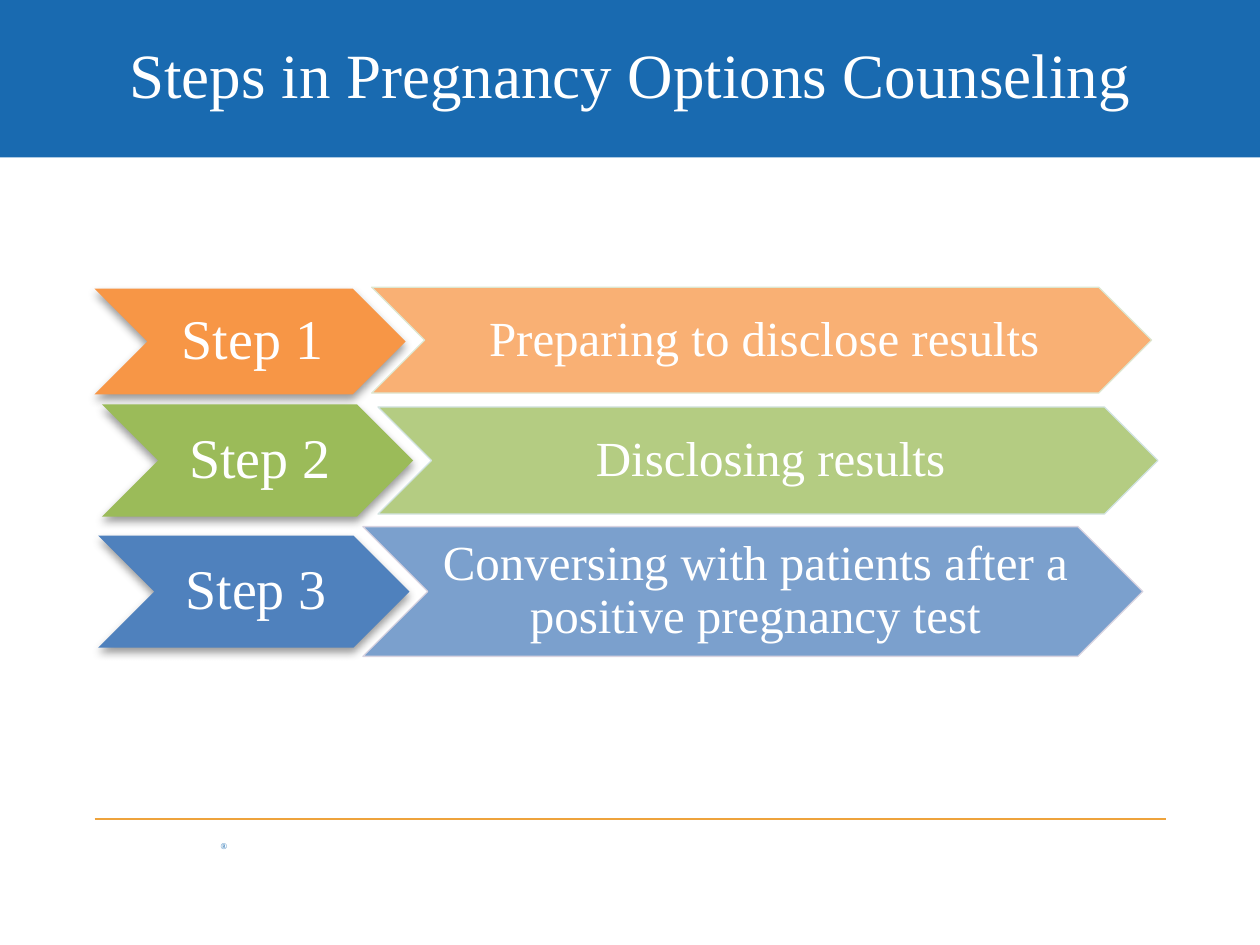
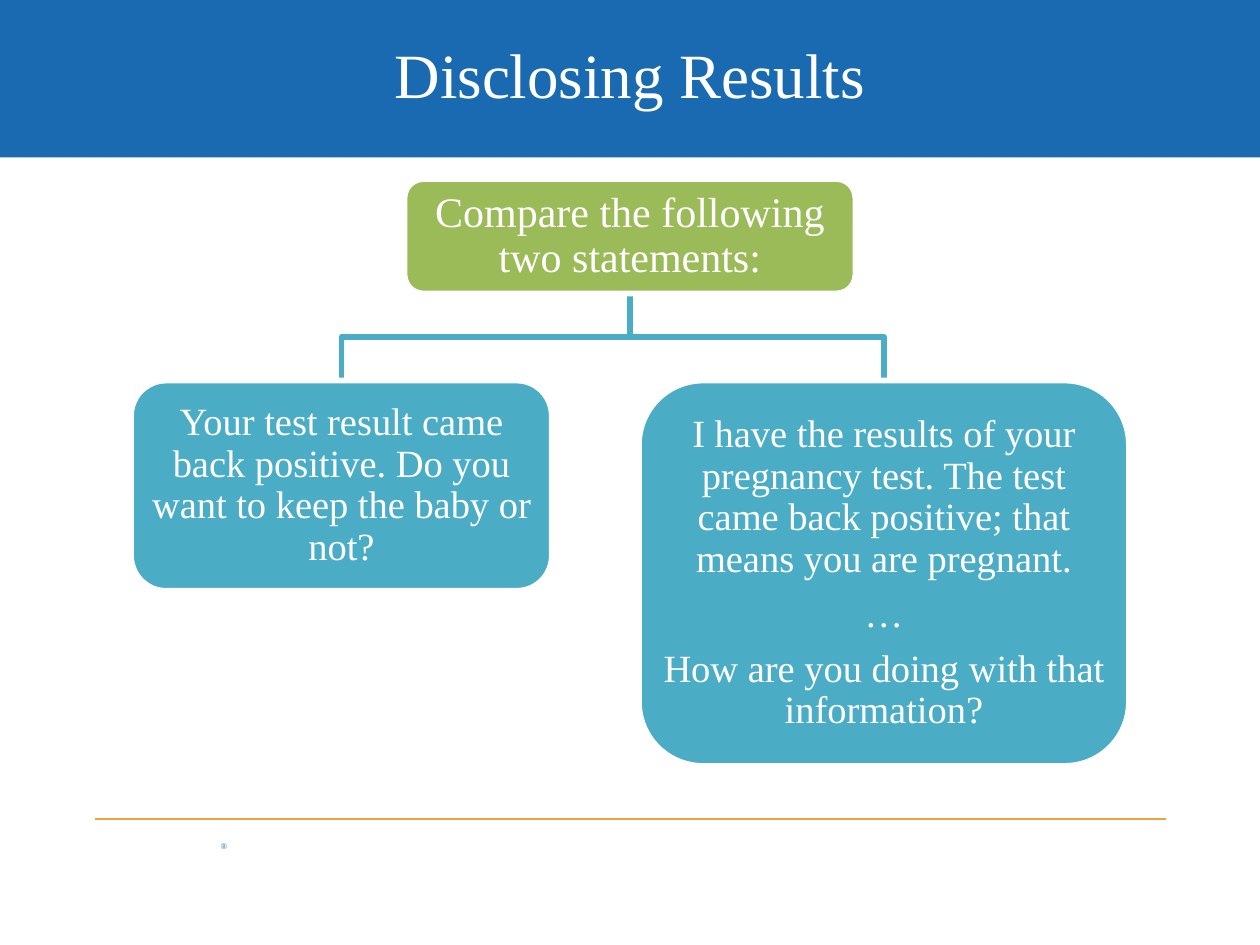
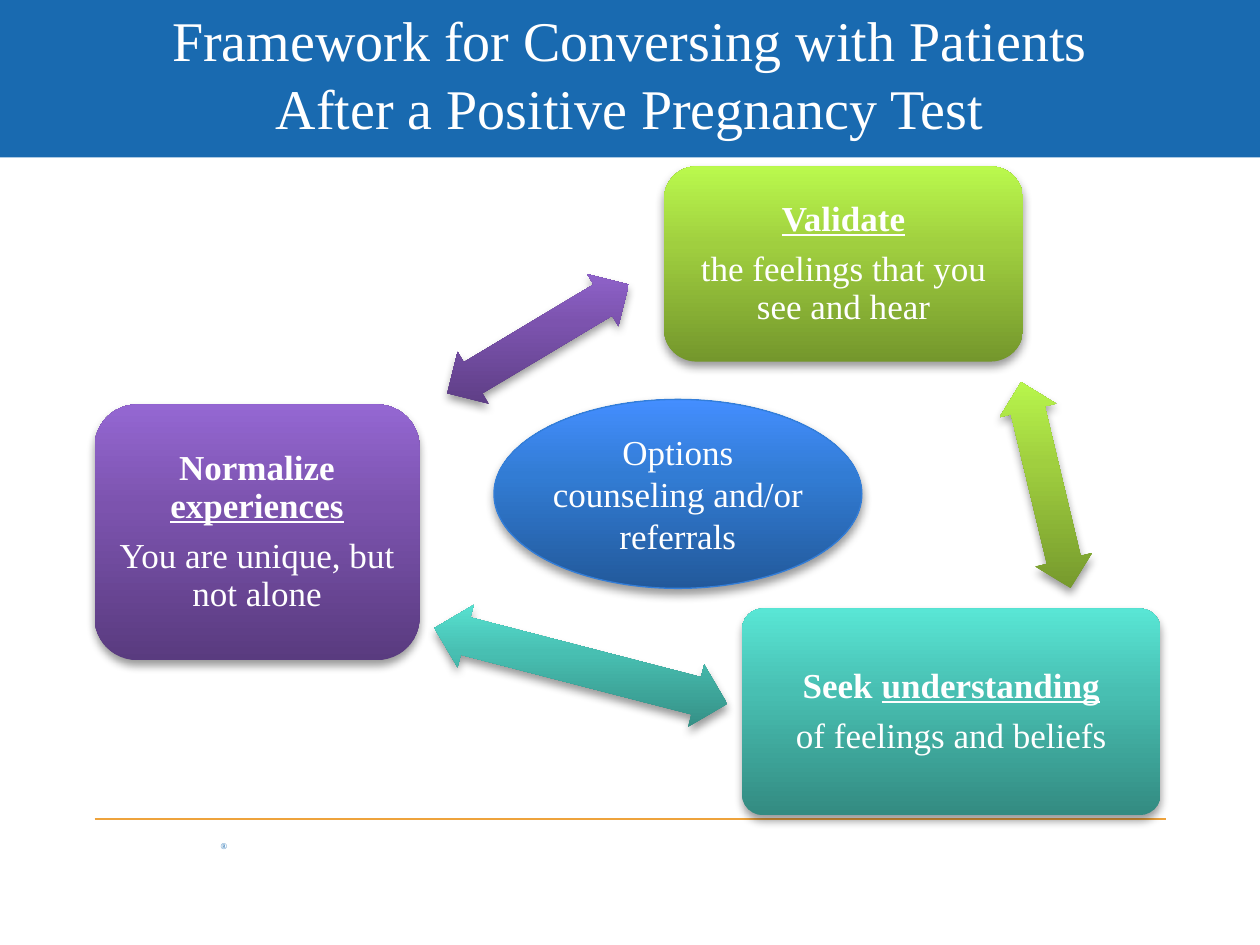
from typing import NamedTuple

from lxml.etree import SubElement
from pptx import Presentation
from pptx.dml.color import RGBColor
from pptx.enum.shapes import MSO_CONNECTOR, MSO_SHAPE as SHAPE
from pptx.enum.text import MSO_ANCHOR as ANCHOR, PP_ALIGN as ALIGN
from pptx.oxml.ns import qn
from pptx.util import Inches, Pt

FONT = "Times New Roman"
WHITE = RGBColor(0xFF, 0xFF, 0xFF)
BLACK = RGBColor(0x00, 0x00, 0x00)
BAND_BLUE = RGBColor(0x19, 0x6A, 0xB0)
RULE_GOLD = RGBColor(0xEE, 0xA3, 0x3C)
ORANGE = RGBColor(0xF7, 0x96, 0x46)
GREEN = RGBColor(0x9B, 0xBB, 0x59)
BLUE = RGBColor(0x4F, 0x81, 0xBD)
AQUA = RGBColor(0x4B, 0xAC, 0xC6)
ORANGE_EDGE = RGBColor(0xDE, 0xE7, 0xD1)
GREEN_EDGE = RGBColor(0xD2, 0xE3, 0xE2)
BLUE_EDGE = RGBColor(0xD8, 0xD3, 0xE0)
OVAL_EDGE = RGBColor(0x33, 0x7E, 0xD9)
LIME_RAMP = RGBColor(0x74, 0x97, 0x2C), RGBColor(0xA0, 0xCF, 0x3F), RGBColor(0xBA, 0xF9, 0x4D)
TEAL_RAMP = RGBColor(0x33, 0x8B, 0x81), RGBColor(0x48, 0xBF, 0xB2), RGBColor(0x59, 0xE6, 0xD5)
PURPLE_RAMP = RGBColor(0x59, 0x3B, 0x7F), RGBColor(0x7C, 0x53, 0xAE), RGBColor(0x94, 0x67, 0xD2)
BLUE_RAMP = RGBColor(0x22, 0x59, 0x9B), RGBColor(0x32, 0x7C, 0xD4), RGBColor(0x44, 0x8E, 0xFF)
RAMP_STOPS = 0, 60, 100

COLS, ROWS = 100, 75
CELL = Inches(0.1)


class Box(NamedTuple):
    """A region measured in columns and rows of the slide grid."""
    x: float
    y: float
    w: float
    h: float

    def inner(self, x, y, w, h):
        """Return a box placed relative to this one."""
        return Box(self.x + x, self.y + y, w, h)

    def emu(self):
        """Return left, top, width and height as lengths."""
        return [round(v * CELL) for v in self]


PAGE = Box(0, 0, COLS, ROWS)


def set_alpha(clr, alpha):
    """Give a colour element its opacity in percent."""
    SubElement(clr, qn("a:alpha"), val=str(alpha * 1000))


def append_color(parent, color):
    """Append an RGB colour element and return it."""
    return SubElement(parent, qn("a:srgbClr"), val=str(color))


def write(tf, paragraphs, size, color=WHITE, align=ALIGN.CENTER, spacing=None,
          after=0, margins=None, anchor=ANCHOR.MIDDLE):
    """Fill a text frame; a paragraph is a string or a bold (plain, underlined) pair."""
    tf.word_wrap = True
    tf.vertical_anchor = anchor
    if margins:
        tf.margin_left, tf.margin_top, tf.margin_right, tf.margin_bottom = map(Inches, margins)
    for i, content in enumerate(paragraphs):
        p = tf.add_paragraph() if i else tf.paragraphs[0]
        p.alignment = align
        if spacing:
            p.line_spacing = spacing
        p.space_after = Pt(round(after * size, 1))
        p.font.name, p.font.size, p.font.color.rgb = FONT, Pt(size), color
        if isinstance(content, str):
            p.text = content
            continue
        p.font.bold = True
        for text, underline in zip(content, (False, True)):
            if text:
                r = p.add_run()
                r.text = text
                r.font.underline = underline


def write_label(sp, paragraphs, size, margins):
    """Write the tight centred text used inside diagram shapes."""
    write(sp.text_frame, paragraphs, size, spacing=0.9, after=0.35, margins=margins)


def add_shape(slide, kind, box, fill, edge=None, edge_width=0.75, alpha=None, shadow=False):
    """Add a preset shape with a solid colour or a three-colour ramp."""
    sp = slide.shapes.add_shape(kind, *box.emu())
    sp.shadow.inherit = False
    spPr = sp._element.spPr
    if isinstance(fill, RGBColor):
        sp.fill.solid()
        sp.fill.fore_color.rgb = fill
        if alpha:
            set_alpha(spPr.find(qn("a:solidFill")).find(qn("a:srgbClr")), alpha)
    else:
        sp.fill.gradient()
        sp.fill.gradient_angle = 90
        grad = spPr.find(qn("a:gradFill"))
        grad.set("rotWithShape", "0")
        stops = grad.find(qn("a:gsLst"))
        stops[:] = []
        for stop, color in zip(RAMP_STOPS, fill):
            append_color(SubElement(stops, qn("a:gs"), pos=str(stop * 1000)), color)
    if edge:
        sp.line.color.rgb = edge
        sp.line.width = Pt(edge_width)
    else:
        sp.line.fill.background()
    if shadow:
        outer = SubElement(spPr.find(qn("a:effectLst")), qn("a:outerShdw"),
                           blurRad=str(Pt(5.2)), dist=str(Pt(3)), dir="5400000", rotWithShape="0")
        set_alpha(append_color(outer, BLACK), 40)
    return sp


def add_frame(slide, title, size):
    """Add the title band, the footer rule and its mark."""
    add_shape(slide, SHAPE.RECTANGLE, PAGE.inner(0, 0, COLS, 12.5), BAND_BLUE)
    mark = slide.shapes.add_textbox(*PAGE.inner(17.5, 66.7, 2.5, 0.8).emu())
    write(mark.text_frame, ["®"], 5, BAND_BLUE, ALIGN.LEFT, margins=(0, 0, 0, 0),
          anchor=ANCHOR.TOP)
    x, y, w, _ = PAGE.inner(7.5, 65, 85, 0).emu()
    rule = slide.shapes.add_connector(MSO_CONNECTOR.STRAIGHT, x, y, x + w, y)
    rule.line.color.rgb = RULE_GOLD
    rule.line.width = Pt(0.75)
    SubElement(rule._element.spPr, qn("a:effectLst"))
    heading = slide.shapes.add_textbox(*PAGE.inner(5, 0.8, 90, 10).emu())
    write(heading.text_frame, [title], size)


def add_steps(slide, box):
    """Add three pairs of chevrons, a step label and its description."""
    steps = [
        ("Preparing to disclose results", ORANGE, ORANGE_EDGE,
         (0, 0.1, 24.7, 8.4), (22, 0, 61.9, 8.4)),
        ("Disclosing results", GREEN, GREEN_EDGE,
         (0.6, 9.3, 24.7, 8.9), (22.5, 9.5, 61.9, 8.5)),
        ("Conversing with patients after a positive pregnancy test", BLUE, BLUE_EDGE,
         (0.3, 19.7, 24.7, 8.9), (21.3, 19, 61.9, 10.3)),
    ]
    margins = 0.04, 0.02, 0, 0.02
    for number, (text, color, edge, label_at, detail_at) in enumerate(steps, 1):
        label = add_shape(slide, SHAPE.CHEVRON, box.inner(*label_at), color, shadow=True)
        write_label(label, [f"Step {number}"], 32, margins)
        detail = add_shape(slide, SHAPE.CHEVRON, box.inner(*detail_at), color, edge, alpha=75)
        write_label(detail, [text], 28, margins)


def add_elbow(slide, parent, child):
    """Draw a stepped line from a parent's bottom to a child's top."""
    x1, y1 = parent.x + parent.w / 2, parent.y + parent.h
    x2, y2 = child.x + child.w / 2, child.y
    middle = (y1 + y2) / 2
    corners = [(round(x * CELL), round(y * CELL))
               for x, y in ((x1, y1), (x1, middle), (x2, middle), (x2, y2))]
    outline = slide.shapes.build_freeform(*corners[0])
    outline.add_line_segments(corners[1:], close=False)
    sp = outline.convert_to_shape()
    sp.shadow.inherit = False
    sp.fill.background()
    sp.line.color.rgb = AQUA
    sp.line.width = Pt(3.35)


def add_tree(slide, box):
    """Add a prompt with two statements below it."""
    root = box.inner(21.7, 0, 35.8, 9.1)
    left = box.inner(0, 16, 33.4, 16.7)
    right = box.inner(40.3, 16, 38.9, 30.6)
    for child in (right, left):
        add_elbow(slide, root, child)
    nodes = [
        (root, GREEN, 24, ["Compare the following two statements:"]),
        (left, AQUA, 22,
         ["Your test result came back positive. Do you want to keep the baby or not?"]),
        (right, AQUA, 22,
         ["I have the results of your pregnancy test. The test came back positive; "
          "that means you are pregnant.", "…", "How are you doing with that information?"]),
    ]
    for node, color, size, text in nodes:
        sp = add_shape(slide, SHAPE.ROUNDED_RECTANGLE, node, color, WHITE, 3.35)
        write_label(sp, text, size, (0.02, 0.02, 0.02, 0.02))


def add_cycle(slide, box):
    """Add three cards joined by arrows around a central oval."""
    alternate = SHAPE.FLOWCHART_ALTERNATE_PROCESS
    cards = [
        (alternate, LIME_RAMP, (45.2, 0, 28.5, 15.5), 0.08,
         ("", "Validate"), "the feelings that you see and hear",
         (67.1, 23, 16.8, 4.6), 76.5),
        (SHAPE.ROUNDED_RECTANGLE, TEAL_RAMP, (51.4, 35.1, 33.2, 16.4), 0.1,
         ("Seek ", "understanding"), "of feelings and beliefs",
         (26.6, 37.1, 24, 5.1), 194.5),
        (alternate, PURPLE_RAMP, (0, 18.9, 25.8, 20.3), 0.1,
         ("Normalize ", "experiences"), "You are unique, but not alone",
         (26.8, 11.3, 16.8, 4.8), 329.1),
    ]
    for kind, ramp, card_at, side, heading, text, arrow_at, angle in cards:
        card = add_shape(slide, kind, box.inner(*card_at), ramp, shadow=True)
        if kind == SHAPE.ROUNDED_RECTANGLE:
            card.adjustments[0] = 0.1
        write_label(card, [heading, text], 20, (side, 0.08, side, 0.08))
        arrow = add_shape(slide, SHAPE.LEFT_RIGHT_ARROW, box.inner(*arrow_at), ramp, shadow=True)
        arrow.adjustments[0], arrow.adjustments[1] = 0.6, 0.5
        arrow.rotation = angle
    oval = add_shape(slide, SHAPE.OVAL, box.inner(31.7, 18.5, 29.2, 15), BLUE_RAMP,
                     OVAL_EDGE, shadow=True)
    write(oval.text_frame, ["Options counseling and/or referrals"], 20,
          margins=(0, 0.05, 0, 0.05))


def main():
    """Build the three slides and save them."""
    prs = Presentation()
    prs.slide_width, prs.slide_height = COLS * CELL, ROWS * CELL
    slides = [
        ("Steps in Pregnancy Options Counseling", 36, add_steps, (7.5, 22.8, 85, 29.3)),
        ("Disclosing Results", 36, add_tree, (10.4, 14.2, 79.2, 46.6)),
        ("Framework for Conversing with Patients\vAfter a Positive Pregnancy Test", 32,
         add_cycle, (7.5, 13.2, 85, 51.5)),
    ]
    for title, size, add_diagram, region in slides:
        slide = prs.slides.add_slide(prs.slide_layouts[6])
        add_frame(slide, title, size)
        add_diagram(slide, PAGE.inner(*region))
    prs.save("out.pptx")


if __name__ == "__main__":
    main()
